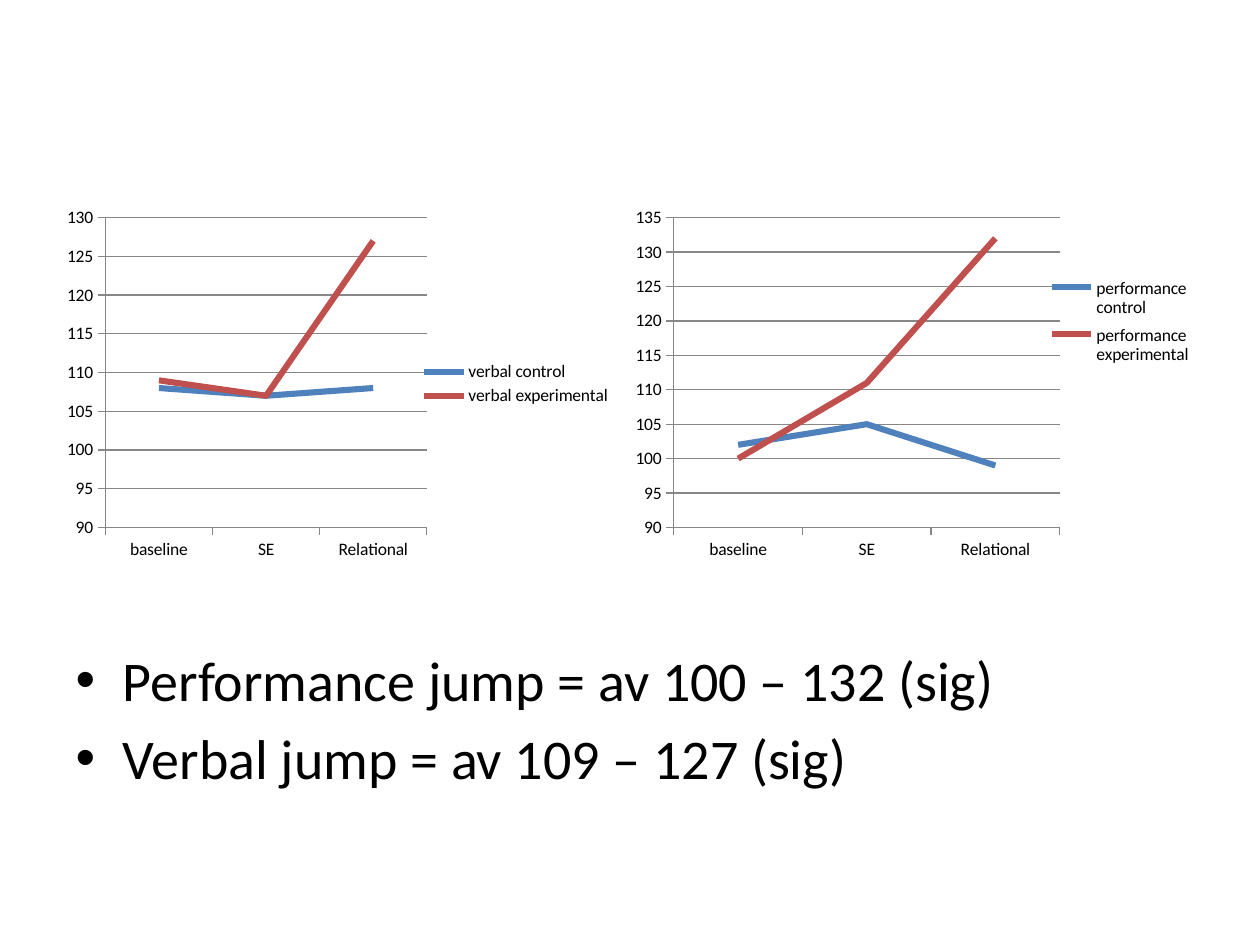
from dataclasses import dataclass

from lxml.etree import SubElement
from pptx import Presentation
from pptx.chart.data import CategoryChartData
from pptx.dml.color import RGBColor
from pptx.enum.chart import XL_CHART_TYPE, XL_LEGEND_POSITION, XL_TICK_MARK
from pptx.oxml import parse_xml
from pptx.oxml.ns import nsdecls, qn
from pptx.util import Emu, Pt

PX_PER_INCH = 126
FONT = "Calibri"
BLACK = "000000"
GREY = "878787"
SERIES_COLORS = ("4F81BD", "C0504D")
CATEGORIES = ("baseline", "SE", "Relational")
Box = tuple[float, float, float, float]


@dataclass
class ScoreChart:
    box: tuple[int, int, int, int]
    top_score: int
    plot: Box
    legend: Box
    series: dict[str, tuple[int, ...]]


CHARTS = (
    ScoreChart((48, 195, 574, 378), 130, (0.1, 0.06, 0.56, 0.82), (0.65, 0.43, 0.33, 0.14),
               {"verbal control": (108, 107, 108), "verbal experimental": (109, 107, 127)}),
    ScoreChart((622, 195, 576, 378), 135, (0.09, 0.06, 0.67, 0.82), (0.74, 0.2, 0.25, 0.27),
               {"performance control": (102, 105, 99),
                "performance experimental": (100, 111, 132)}),
)
FINDINGS = ("Performance jump = av 100 – 132 (sig)", "Verbal jump = av 109 – 127 (sig)")


def px(n: int) -> Emu:
    return Emu(round(n * 914400 / PX_PER_INCH))


def rgb(color: str) -> RGBColor:
    return RGBColor.from_string(color)


def set_font(font, size: int, color: str = BLACK) -> None:
    font.name = FONT
    font.size = Pt(size)
    font.color.rgb = rgb(color)


def set_line(line, color: str, width: float) -> None:
    line.color.rgb = rgb(color)
    line.width = Pt(width)


def manual_layout(parent, box: Box, inner: bool = False):
    for old in parent.findall(qn("c:layout")):
        parent.remove(old)
    layout = parse_xml(f"<c:layout {nsdecls('c')}><c:manualLayout/></c:layout>")
    values = [("layoutTarget", "inner")] if inner else []
    values += [("xMode", "edge"), ("yMode", "edge"), *zip("xywh", box)]
    for tag, val in values:
        SubElement(layout[0], qn(f"c:{tag}")).set("val", str(val))
    return layout


def add_score_chart(s, spec: ScoreChart) -> None:
    data = CategoryChartData()
    data.categories = CATEGORIES
    for name, scores in spec.series.items():
        data.add_series(name, scores)
    chart = s.shapes.add_chart(XL_CHART_TYPE.LINE, *map(px, spec.box), data).chart
    set_font(chart.font, 10)
    chart.has_title = False
    chart.plots[0].vary_by_categories = False
    for ser, color in zip(chart.plots[0].series, SERIES_COLORS):
        ser.smooth = False
        set_line(ser.format.line, color, 3.5)

    for axis in (chart.category_axis, chart.value_axis):
        axis.major_tick_mark = XL_TICK_MARK.OUTSIDE
        axis.minor_tick_mark = XL_TICK_MARK.NONE
        set_line(axis.format.line, GREY, 0.75)
    axis = chart.value_axis
    axis.minimum_scale, axis.maximum_scale, axis.major_unit = 90, spec.top_score, 5
    axis.has_major_gridlines = True
    set_line(axis.major_gridlines.format.line, GREY, 0.75)

    chart.has_legend = True
    legend = chart.legend
    legend.position = XL_LEGEND_POSITION.RIGHT
    legend.include_in_layout = False
    set_font(legend.font, 10)
    el = legend._element
    legend_layout = manual_layout(el, spec.legend)
    el.find(qn("c:overlay")).addprevious(legend_layout)
    area = chart._chartSpace.chart.plotArea
    area.insert(0, manual_layout(area, spec.plot, inner=True))


def add_findings(sp, lines: tuple[str, ...], *, size: int) -> None:
    sp.left, sp.top, sp.width, sp.height = map(px, (63, 639, 1134, 205))
    tf = sp.text_frame
    tf.text = "\n".join(lines)
    for p in tf.paragraphs:
        for r in p.runs:
            set_font(r.font, size)


def main() -> None:
    prs = Presentation()
    prs.slide_width, prs.slide_height = px(1260), px(945)
    s = prs.slides.add_slide(prs.slide_layouts[1])
    title = s.shapes.title._element
    title.getparent().remove(title)
    add_findings(s.placeholders[1], FINDINGS, size=32)
    for spec in CHARTS:
        add_score_chart(s, spec)
    prs.save("out.pptx")


if __name__ == "__main__":
    main()
